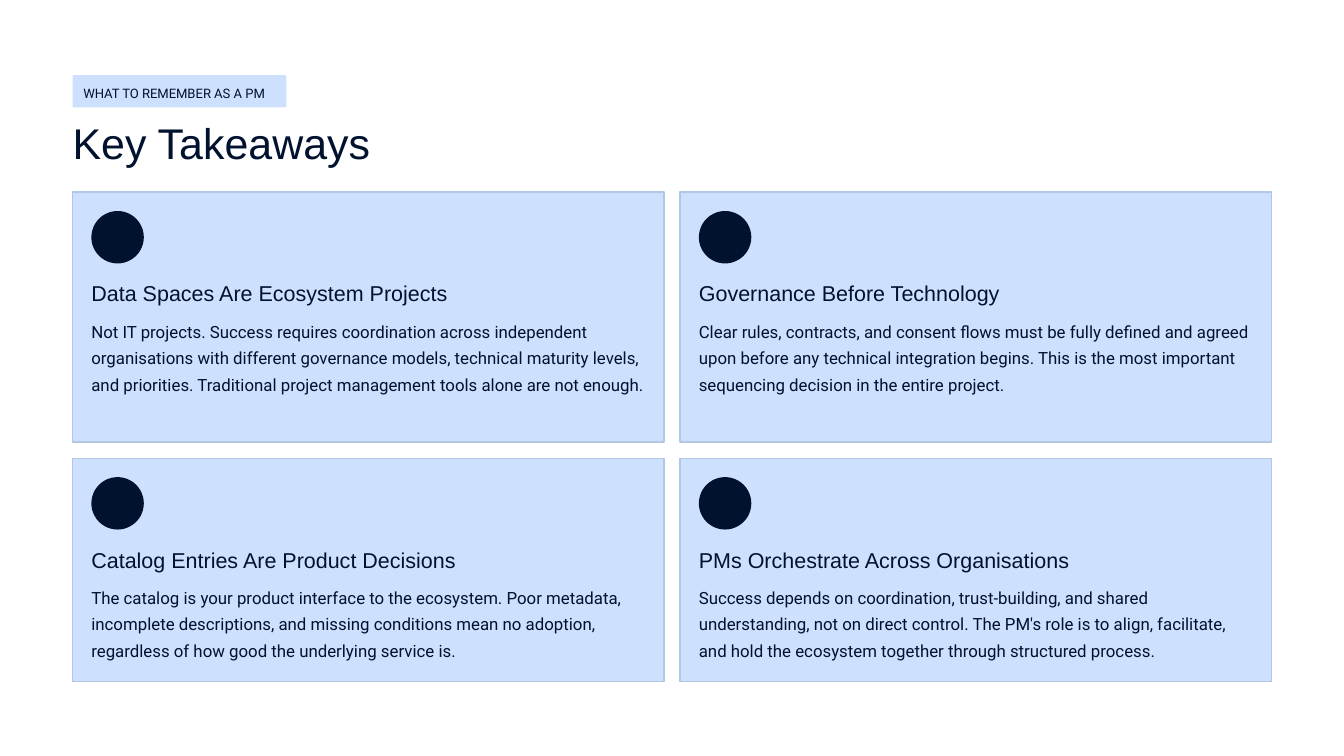
import dataclasses
import pptx
import pptx.dml.color
import pptx.enum.shapes
import pptx.util

Inches = pptx.util.Inches
Shape = pptx.enum.shapes.MSO_SHAPE


@dataclasses.dataclass(frozen=True)
class Theme:
    paper: str = "FFFFFF"
    ink: str = "01122E"
    panel: str = "CDE0FE"
    edge: str = "B3C6E4"
    head: str = "Arial"
    body: str = "Roboto"
    title_size: float = 23
    card_size: float = 11.5
    body_size: float = 9
    tag_size: float = 7
    head_gap: float = 1.04
    body_gap: float = 1.3


THEME = Theme()

LEFT, TOP = 0.54, 1.43
WIDTH, GAP, PAD = 4.4, 0.12, 0.14
HEIGHTS = (1.86, 1.66)

# Heading, heading width, body text, body height; two cards to a row
CARDS = [
    ("Data Spaces Are Ecosystem Projects", 2.78,
     "Not IT projects. Success requires coordination across independent "
     "organisations with different governance models, technical maturity levels, "
     "and priorities. Traditional project management tools alone are not enough.",
     0.8),
    ("Governance Before Technology", 2.31,
     "Clear rules, contracts, and consent flows must be fully defined and agreed "
     "upon before any technical integration begins. This is the most important "
     "sequencing decision in the entire project.",
     0.6),
    ("Catalog Entries Are Product Decisions", 2.87,
     "The catalog is your product interface to the ecosystem. Poor metadata, "
     "incomplete descriptions, and missing conditions mean no adoption, "
     "regardless of how good the underlying service is.",
     0.6),
    ("PMs Orchestrate Across Organisations", 2.97,
     "Success depends on coordination, trust-building, and shared "
     "understanding, not on direct control. The PM's role is to align, facilitate, "
     "and hold the ecosystem together through structured process.",
     0.6),
]


def color(code):
    return pptx.dml.color.RGBColor.from_string(code)


def add_box(slide, kind, x, y, w, h, fill, line=None):
    box = slide.shapes.add_shape(kind, Inches(x), Inches(y), Inches(w), Inches(h))
    box.shadow.inherit = False
    box.fill.solid()
    box.fill.fore_color.rgb = color(fill)
    if line:
        box.line.color.rgb = color(line)
        box.line.width = pptx.util.Pt(0.75)
    else:
        box.line.fill.background()
    return box


def add_text(slide, text, x, y, w, h, font, size, gap, wrap=False):
    box = slide.shapes.add_textbox(Inches(x), Inches(y), Inches(w), Inches(h))
    frame = box.text_frame
    frame.margin_left = frame.margin_right = 0
    frame.margin_top = frame.margin_bottom = 0
    frame.word_wrap = wrap
    para = frame.paragraphs[0]
    para.text = text
    para.line_spacing = gap
    para.font.name = font
    para.font.size = pptx.util.Pt(size)
    para.font.color.rgb = color(THEME.ink)


def add_header(slide):
    tag = add_box(slide, Shape.ROUNDED_RECTANGLE, LEFT, 0.56, 1.59, 0.24, THEME.panel)
    tag.adjustments[0] = 0.03
    add_text(slide, "WHAT TO REMEMBER AS A PM", 0.62, 0.6, 1.94, 0.16,
             THEME.body, THEME.tag_size, THEME.body_gap)
    add_text(slide, "Key Takeaways", LEFT, 0.85, 3.72, 0.4,
             THEME.head, THEME.title_size, THEME.head_gap)


def add_card(slide, x, y, h, title, span, body, depth):
    card = add_box(slide, Shape.ROUNDED_RECTANGLE, x, y, WIDTH, h,
                   THEME.panel, THEME.edge)
    card.adjustments[0] = 0
    inner = x + PAD
    dot = add_box(slide, Shape.ROUNDED_RECTANGLE, inner, y + PAD, 0.39, 0.39, THEME.ink)
    dot.adjustments[0] = 0.5
    add_text(slide, title, inner, y + 0.65, span, 0.2,
             THEME.head, THEME.card_size, THEME.head_gap)
    add_text(slide, body, inner, y + 0.92, WIDTH - 2 * PAD + 0.01, depth,
             THEME.body, THEME.body_size, THEME.body_gap, wrap=True)


def main():
    deck = pptx.Presentation()
    deck.slide_width, deck.slide_height = Inches(10), Inches(10 * 9 / 16)
    slide = deck.slides.add_slide(deck.slide_layouts[6])
    slide.background.fill.solid()
    slide.background.fill.fore_color.rgb = color(THEME.paper)
    add_header(slide)
    for i, card in enumerate(CARDS):
        row, col = divmod(i, 2)
        x = LEFT + col * (WIDTH + GAP)
        y = TOP + sum(HEIGHTS[:row]) + row * GAP
        add_card(slide, x, y, HEIGHTS[row], *card)
    deck.save("out.pptx")


if __name__ == "__main__":
    main()
